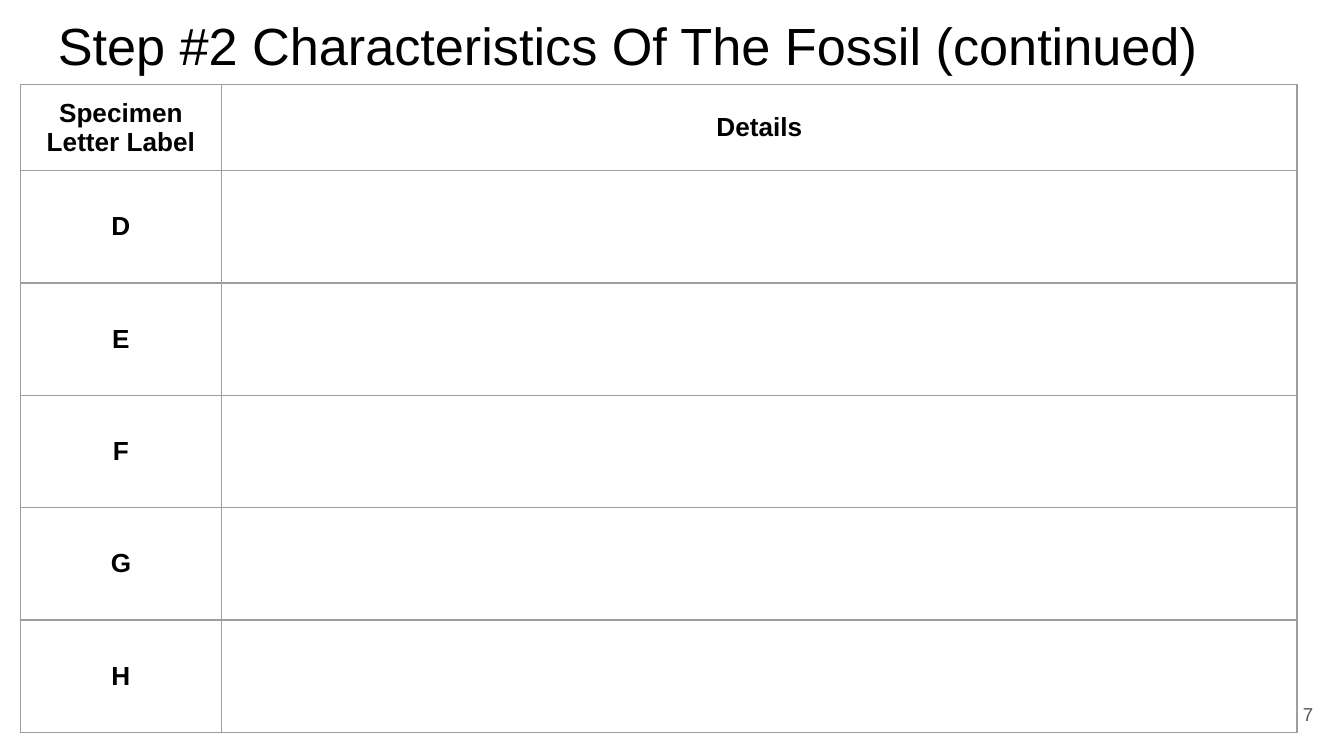
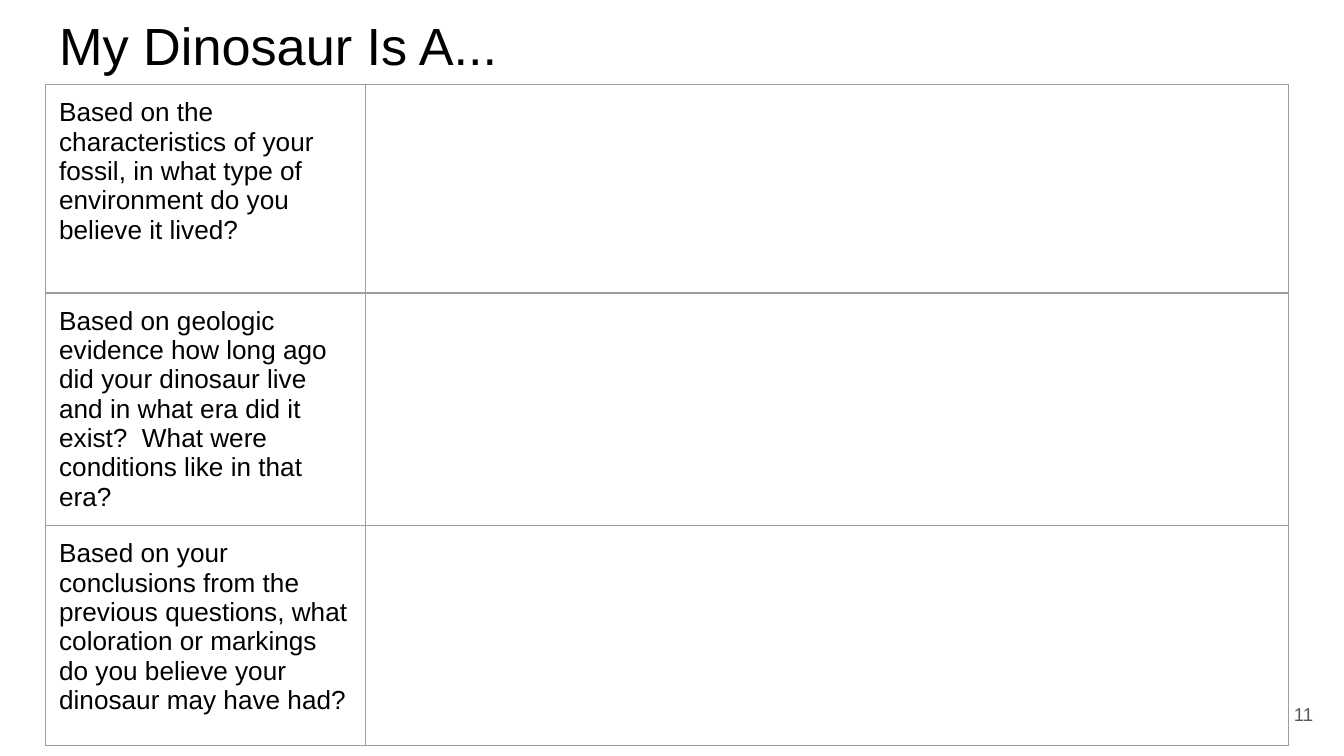
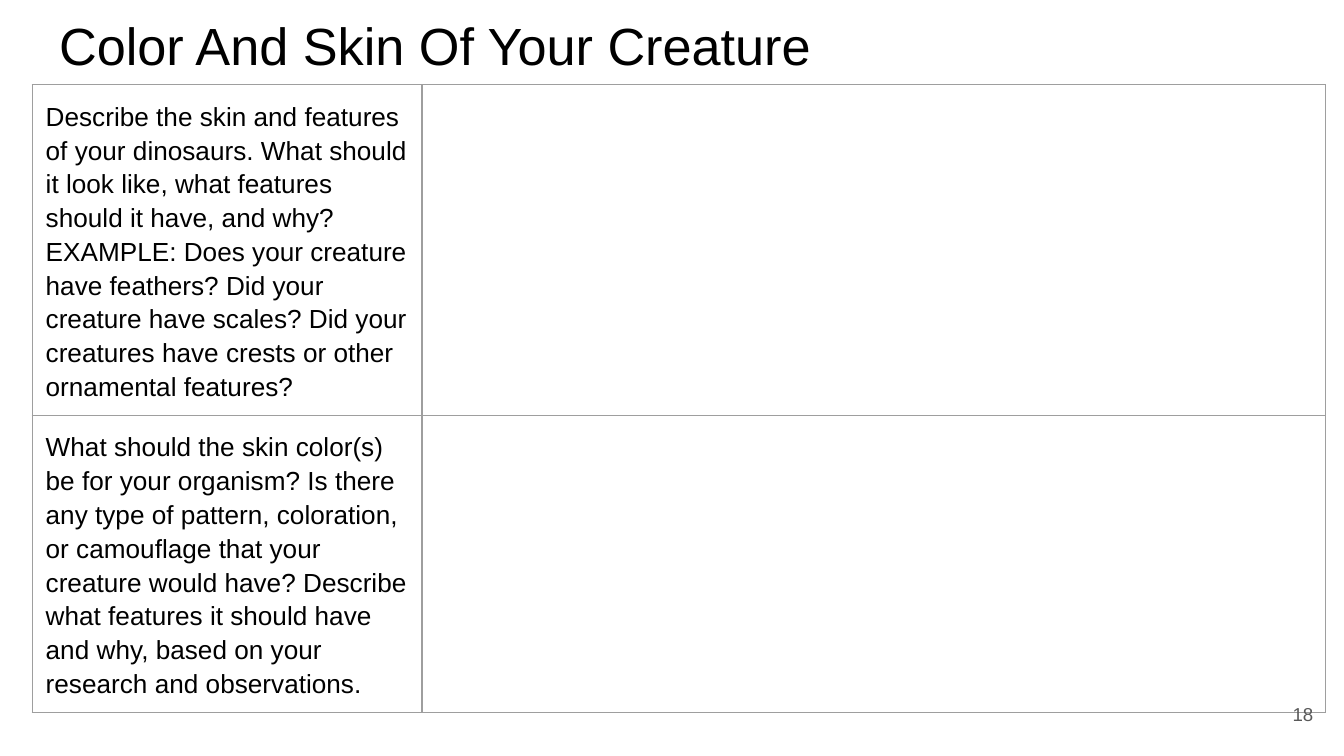
from dataclasses import dataclass
from typing import Optional

import lxml.etree
import pptx
import pptx.dml.color
import pptx.enum.text
import pptx.oxml.ns
import pptx.presentation
import pptx.shapes.autoshape
import pptx.slide
import pptx.table
import pptx.text.text
import pptx.util

RGBColor = pptx.dml.color.RGBColor
Align = pptx.enum.text.PP_ALIGN
Anchor = pptx.enum.text.MSO_ANCHOR

INK = RGBColor(0x00, 0x00, 0x00)
PAGE_GRAY = RGBColor(0x59, 0x59, 0x59)
RULE_GRAY = RGBColor(0x9E, 0x9E, 0x9E)
PAPER = RGBColor(0xFF, 0xFF, 0xFF)
FONT = "Arial"

COLUMNS = 100
ROWS = COLUMNS * 9 / 16
TITLE_ROWS = 6.3
TITLE_ONLY_LAYOUT = 5


def grid(units: float) -> int:
    return pptx.util.Inches(units / 10)


INSET = grid(1)
RULE_WIDTH = pptx.util.Pt(0.75)


@dataclass(frozen=True)
class CellStyle:
    align: Align = Align.LEFT
    anchor: Anchor = Anchor.TOP
    bold: bool = False
    spacing: Optional[float] = None


@dataclass(frozen=True)
class Worksheet:
    title: str
    page: int
    left: float
    widths: tuple[float, float]
    heights: tuple[float, ...]
    prompts: tuple[tuple[str, str], ...]
    style: CellStyle
    title_left: float = 3.4
    number_behind: bool = False


LABELS = CellStyle(Align.CENTER, Anchor.MIDDLE, True)
QUESTIONS = CellStyle()
SPACED_QUESTIONS = CellStyle(spacing=1.15)

WORKSHEETS = (
    Worksheet(
        "Step #2 Characteristics Of The Fossil (continued)", 7, 1.5,
        (15, 80), (6.4,) + (8.36,) * 5,
        (("Specimen Letter Label", "Details"),) + tuple((letter, "") for letter in "DEFGH"),
        LABELS, title_left=3.3, number_behind=True,
    ),
    Worksheet(
        "My Dinosaur Is A...", 11, 3.4, (23.8, 68.7), (15.5, 16.4, 16.4),
        (
            ("Based on the characteristics of your fossil, in what type of "
             "environment do you believe it lived?", ""),
            ("Based on geologic evidence how long ago did your dinosaur live and in "
             "what era did it exist?  What were conditions like in that era?", ""),
            ("Based on your conclusions from the previous questions, what coloration "
             "or markings do you believe your dinosaur may have had?", ""),
        ),
        QUESTIONS,
    ),
    Worksheet(
        "Color And Skin Of Your Creature", 18, 2.4, (29, 67.2), (24.4, 21.9),
        (
            ("Describe the skin and features of your dinosaurs. What should it look "
             "like, what features should it have, and why? EXAMPLE: Does your creature "
             "have feathers? Did your creature have scales? Did your creatures have "
             "crests or other ornamental features?", ""),
            ("What should the skin color(s) be for your organism? Is there any type of "
             "pattern, coloration, or camouflage that your creature would have? Describe "
             "what features it should have and why, based on your research and "
             "observations.", ""),
        ),
        SPACED_QUESTIONS,
    ),
)


def write(frame: pptx.text.text.TextFrame, words: str, size: float,
          color: RGBColor, style: CellStyle) -> None:
    paragraph = frame.paragraphs[0]
    paragraph.alignment = style.align
    if style.spacing:
        paragraph.line_spacing = style.spacing
    run = paragraph.add_run()
    run.text = words
    run.font.name = FONT
    run.font.size = pptx.util.Pt(size)
    run.font.bold = style.bold
    run.font.color.rgb = color


def write_box(box: pptx.shapes.autoshape.Shape, words: str, size: float,
              color: RGBColor, style: CellStyle) -> None:
    frame = box.text_frame
    frame.word_wrap = True
    frame.auto_size = pptx.enum.text.MSO_AUTO_SIZE.NONE
    frame.vertical_anchor = style.anchor
    frame.margin_left = frame.margin_right = INSET
    frame.margin_top = frame.margin_bottom = INSET
    write(frame, words, size, color, style)


def add_title(slide: pptx.slide.Slide, sheet: Worksheet) -> None:
    title = slide.shapes.title
    title.left, title.top = grid(sheet.title_left), 0
    title.width, title.height = grid(93.2), grid(TITLE_ROWS)
    write_box(title, sheet.title, 28, INK, CellStyle())


def add_page_number(slide: pptx.slide.Slide, sheet: Worksheet) -> None:
    corner = slide.shapes.add_textbox(grid(92.7), grid(51), grid(6), grid(4.3))
    write_box(corner, str(sheet.page), 10, PAGE_GRAY, CellStyle(Align.RIGHT, Anchor.MIDDLE))


def rule_cell(cell: pptx.table._Cell) -> None:
    properties = cell._tc.get_or_add_tcPr()
    qn = pptx.oxml.ns.qn
    for position, side in enumerate(("a:lnL", "a:lnR", "a:lnT", "a:lnB")):
        rule = lxml.etree.Element(qn(side), w=str(RULE_WIDTH))
        fill = lxml.etree.SubElement(rule, qn("a:solidFill"))
        lxml.etree.SubElement(fill, qn("a:srgbClr"), val=str(RULE_GRAY))
        properties.insert(position, rule)


def add_answer_table(slide: pptx.slide.Slide, sheet: Worksheet) -> None:
    answers = slide.shapes.add_table(
        len(sheet.heights), len(sheet.widths), grid(sheet.left), grid(TITLE_ROWS),
        grid(sum(sheet.widths)), grid(sum(sheet.heights)),
    ).table
    answers.first_row = answers.horz_banding = False
    for column, width in zip(answers.columns, sheet.widths):
        column.width = grid(width)
    for row, height, prompts in zip(answers.rows, sheet.heights, sheet.prompts):
        row.height = grid(height)
        for cell, words in zip(row.cells, prompts):
            cell.fill.background()
            cell.margin_left = cell.margin_right = INSET
            cell.margin_top = cell.margin_bottom = INSET
            cell.vertical_anchor = sheet.style.anchor
            rule_cell(cell)
            if words:
                write(cell.text_frame, words, 14, INK, sheet.style)


def add_worksheet(deck: pptx.presentation.Presentation, sheet: Worksheet) -> None:
    slide = deck.slides.add_slide(deck.slide_layouts[TITLE_ONLY_LAYOUT])
    slide.background.fill.solid()
    slide.background.fill.fore_color.rgb = PAPER
    add_title(slide, sheet)
    layers = [add_answer_table, add_page_number]
    if sheet.number_behind:
        layers.reverse()
    for add_layer in layers:
        add_layer(slide, sheet)


def main() -> None:
    deck = pptx.Presentation()
    deck.slide_width, deck.slide_height = grid(COLUMNS), grid(ROWS)
    for sheet in WORKSHEETS:
        add_worksheet(deck, sheet)
    deck.save("out.pptx")


if __name__ == "__main__":
    main()
